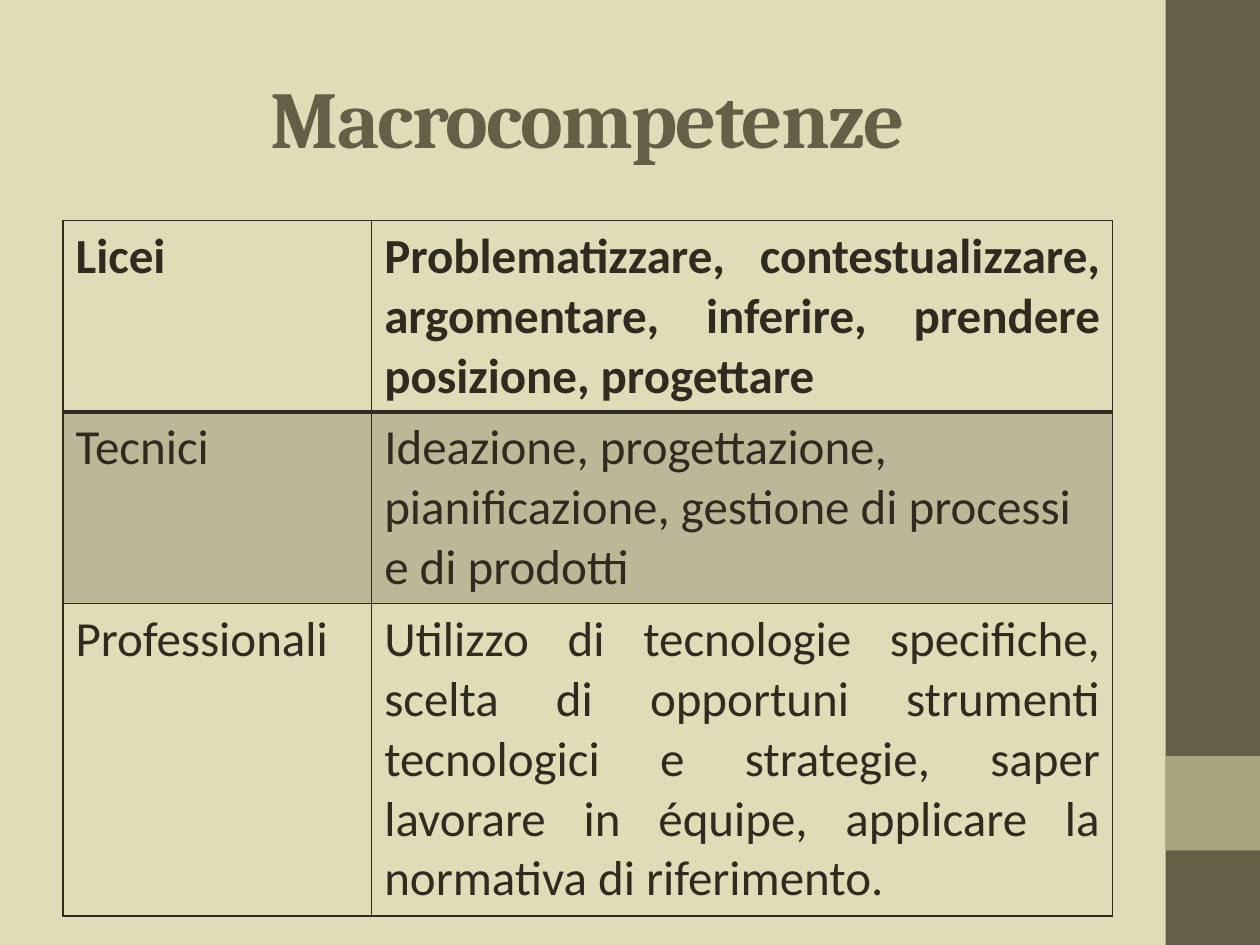
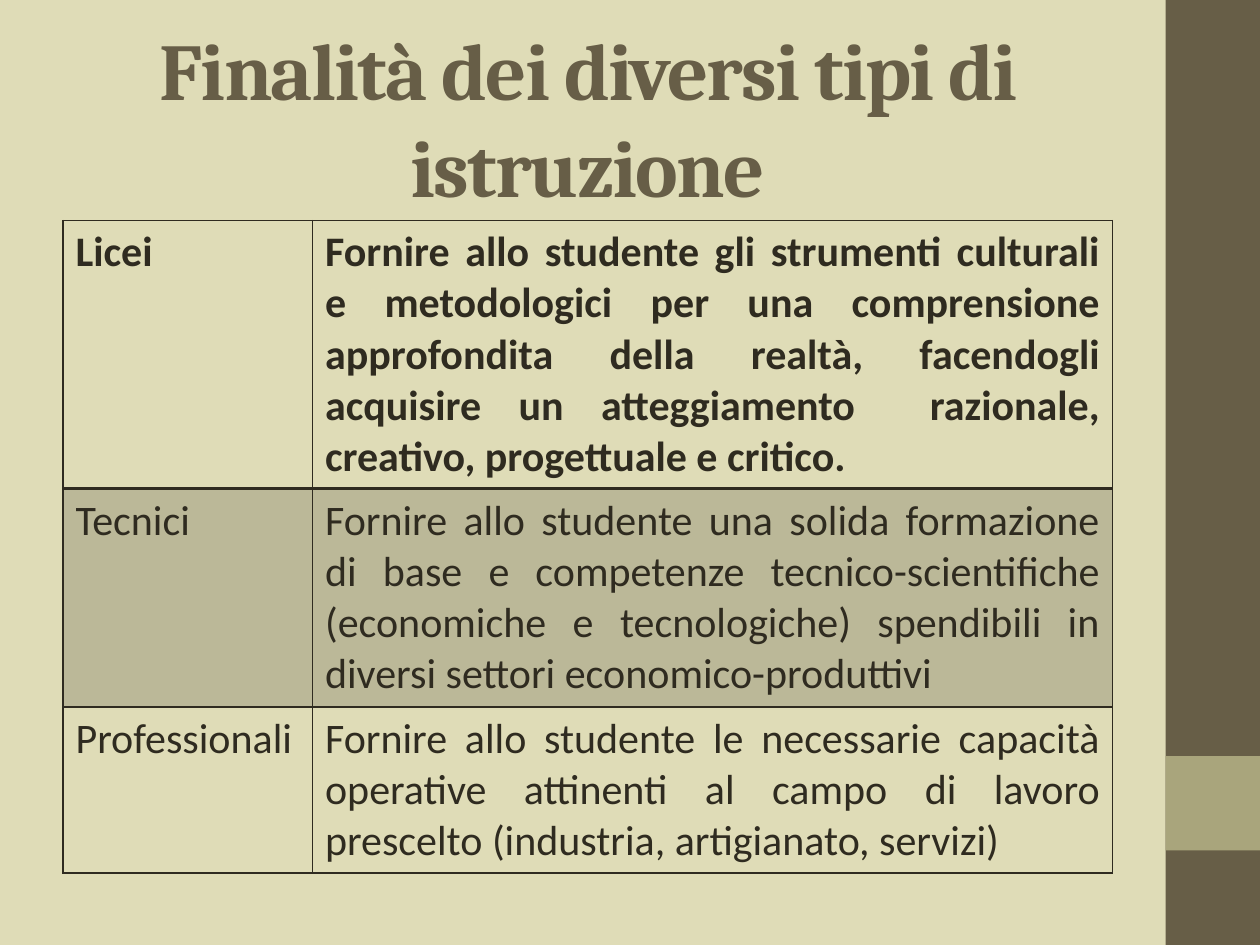
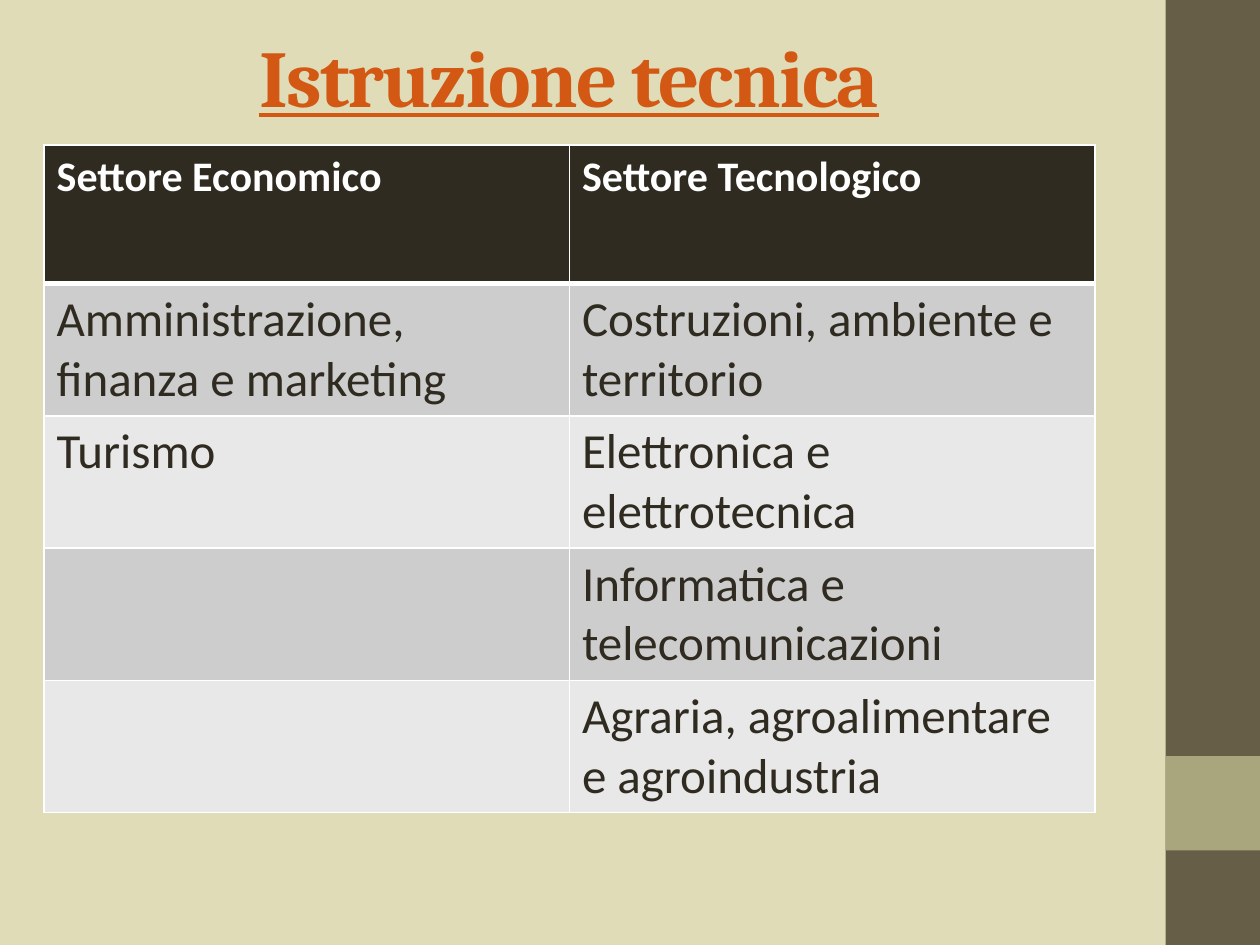
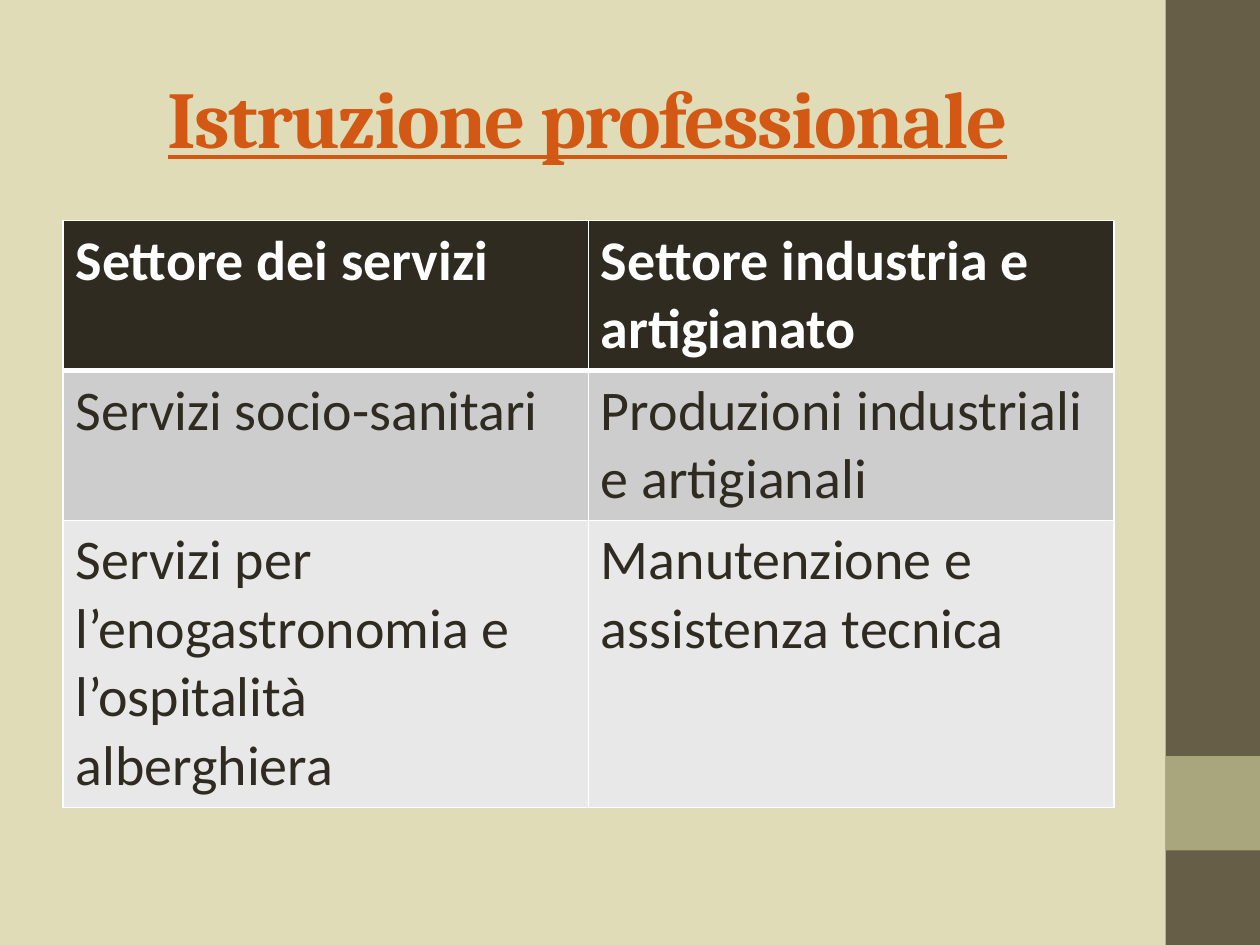
import dataclasses

import pptx
import pptx.dml.color
import pptx.enum.shapes
import pptx.enum.text
import pptx.oxml
import pptx.oxml.ns
import pptx.util

Inches = pptx.util.Inches
Pt = pptx.util.Pt
Align = pptx.enum.text.PP_ALIGN


@dataclasses.dataclass(frozen=True)
class Theme:
    background: str = "DFDCB7"
    band: str = "675E47"
    band_accent: str = "A9A57C"
    title: str = "675E47"
    title_accent: str = "D25814"
    ink: str = "2F2B20"
    white: str = "FFFFFF"
    stripe_dark: str = "CDCDCD"
    stripe_light: str = "E8E8E8"
    title_font: str = "Cambria"
    body_font: str = "Calibri"
    title_size: int = 46
    large: int = 32
    medium: int = 28
    small: int = 24


@dataclasses.dataclass(frozen=True)
class TableStyle:
    title_color: str
    underline: bool
    border: str
    header_rule: int
    header_text: str
    fills: tuple  # header, odd body rows, even body rows; None leaves the cell clear
    alpha: int


theme = Theme()
outlined = TableStyle(theme.title, False, theme.ink, 2, theme.ink,
                      (None, theme.ink, None), 20)
striped = TableStyle(theme.title_accent, True, theme.white, 3, theme.white,
                     (theme.ink, theme.stripe_dark, theme.stripe_light), 100)

slides = [
    {
        "title": "Macrocompetenze",
        "style": outlined, "left": 0.5, "title_top": 0.3,
        "columns": (2.45, 5.88), "heights": (1.52, 1.52, 2.48),
        "sizes": (theme.medium, theme.medium), "justified_rows": (0, 2),
        "rows": [
            ("Licei", "Problematizzare, contestualizzare, argomentare, inferire, "
                      "prendere posizione, progettare"),
            ("Tecnici", "Ideazione, progettazione, pianificazione, gestione di "
                        "processi e di prodotti"),
            ("Professionali", "Utilizzo di tecnologie specifiche, scelta di opportuni "
                              "strumenti tecnologici e strategie, saper lavorare in "
                              "équipe, applicare la normativa di riferimento."),
        ],
    },
    {
        "title": "Finalità dei diversi tipi di istruzione",
        "style": outlined, "left": 0.5, "title_top": 0.3,
        "columns": (1.98, 6.35), "heights": (2.13, 1.73, 1.32),
        "sizes": (theme.small, theme.small), "justified_rows": (0, 1, 2),
        "rows": [
            ("Licei", "Fornire allo studente gli strumenti culturali e metodologici "
                      "per una comprensione approfondita della realtà, facendogli "
                      "acquisire un atteggiamento  razionale, creativo, progettuale "
                      "e critico."),
            ("Tecnici", "Fornire allo studente una solida formazione di base e "
                        "competenze tecnico-scientifiche (economiche e tecnologiche) "
                        "spendibili in diversi settori economico-produttivi"),
            ("Professionali", "Fornire allo studente le necessarie capacità operative "
                              "attinenti al campo di lavoro prescelto (industria, "
                              "artigianato, servizi)"),
        ],
    },
    {
        "title": "Istruzione tecnica",
        "style": striped, "left": 0.35, "title_top": -0.03,
        "columns": (4.17, 4.17), "heights": (1.1, 1.05, 1.05, 1.05, 1.05),
        "sizes": (theme.small, theme.medium), "justified_rows": (),
        "rows": [
            ("Settore Economico", "Settore Tecnologico"),
            ("Amministrazione, finanza e marketing",
             "Costruzioni, ambiente e territorio"),
            ("Turismo", "Elettronica e elettrotecnica"),
            ("", "Informatica e telecomunicazioni"),
            ("", "Agraria, agroalimentare e agroindustria"),
        ],
    },
    {
        "title": "Istruzione professionale",
        "style": striped, "left": 0.5, "title_top": 0.3,
        "columns": (4.17, 4.17), "heights": (1.19, 1.19, 2.28),
        "sizes": (theme.large, theme.large), "justified_rows": (),
        "rows": [
            ("Settore dei servizi", "Settore industria e artigianato"),
            ("Servizi socio-sanitari", "Produzioni industriali e artigianali"),
            ("Servizi per l’enogastronomia e l’ospitalità alberghiera",
             "Manutenzione e assistenza tecnica"),
        ],
    },
]


def format_text(paragraph, font_name, size, color, bold, alignment):
    paragraph.alignment = alignment
    for run in paragraph.runs:
        run.font.name = font_name
        run.font.size = Pt(size)
        run.font.bold = bold
        run.font.color.rgb = pptx.dml.color.RGBColor.from_string(color)


def paint_cell(cell, fill, alpha, border, top_width, bottom_width):
    """Set the cell's fill, with alpha in percent, and its four borders in points."""
    if fill is None:
        cell.fill.background()
    else:
        cell.fill.solid()
        cell.fill.fore_color.rgb = pptx.dml.color.RGBColor.from_string(fill)
    properties = cell._tc.get_or_add_tcPr()
    if fill and alpha < 100:
        color = properties.find(".//" + pptx.oxml.ns.qn("a:srgbClr"))
        color.append(pptx.oxml.parse_xml(
            f'<a:alpha {pptx.oxml.ns.nsdecls("a")} val="{alpha * 1000}"/>'))
    widths = {"lnL": 1, "lnR": 1, "lnT": top_width, "lnB": bottom_width}
    for position, (side, width) in enumerate(widths.items()):
        properties.insert(position, pptx.oxml.parse_xml(
            f'<a:{side} {pptx.oxml.ns.nsdecls("a")} w="{Pt(width)}">'
            f'<a:solidFill><a:srgbClr val="{border}"/></a:solidFill></a:{side}>'))


presentation = pptx.Presentation()
presentation.slide_width = Inches(10)
presentation.slide_height = Inches(7.5)
background = presentation.slide_master.background.fill
background.solid()
background.fore_color.rgb = pptx.dml.color.RGBColor.from_string(theme.background)

for content in slides:
    style = content["style"]
    slide = presentation.slides.add_slide(presentation.slide_layouts[6])

    for top, height, color in ((0, 7.5, theme.band), (6, 0.75, theme.band_accent)):
        band = slide.shapes.add_shape(
            pptx.enum.shapes.MSO_SHAPE.RECTANGLE,
            Inches(9.25), Inches(top), Inches(0.75), Inches(height))
        band.shadow.inherit = False
        band.fill.solid()
        band.fill.fore_color.rgb = pptx.dml.color.RGBColor.from_string(color)
        band.line.fill.background()

    title = slide.shapes.add_textbox(
        Inches(content["left"]), Inches(content["title_top"]),
        Inches(8.33), Inches(1.25))
    title.text_frame.word_wrap = True
    title.text_frame.vertical_anchor = pptx.enum.text.MSO_ANCHOR.MIDDLE
    title.text_frame.text = content["title"]
    paragraph = title.text_frame.paragraphs[0]
    format_text(paragraph, theme.title_font, theme.title_size, style.title_color,
                True, Align.CENTER)
    paragraph.runs[0].font.underline = style.underline
    paragraph.runs[0]._r.get_or_add_rPr().set("spc", "-100")

    rows = content["rows"]
    table = slide.shapes.add_table(
        len(rows), 2, Inches(content["left"]), Inches(content["title_top"] + 1.45 if
                                                      style is outlined else
                                                      content["title_top"] + 1.45
                                                      if content["title_top"] > 0 else 1.15),
        Inches(8.33), Inches(sum(content["heights"]))).table
    table.first_row = False
    table.horz_banding = False
    for column, width in zip(table.columns, content["columns"]):
        column.width = Inches(width)

    for row_index, texts in enumerate(rows):
        table.rows[row_index].height = Inches(content["heights"][row_index])
        is_header = row_index == 0
        fill = style.fills[0] if is_header else style.fills[2 - row_index % 2]
        for column_index, text in enumerate(texts):
            cell = table.cell(row_index, column_index)
            cell.text_frame.text = text
            justified = column_index == 1 and row_index in content["justified_rows"]
            format_text(cell.text_frame.paragraphs[0], theme.body_font,
                        content["sizes"][0 if is_header else 1],
                        style.header_text if is_header else theme.ink, is_header,
                        Align.JUSTIFY if justified else Align.LEFT)
            paint_cell(cell, fill, style.alpha, style.border,
                       style.header_rule if row_index == 1 else 1,
                       style.header_rule if is_header else 1)

presentation.save("out.pptx")
